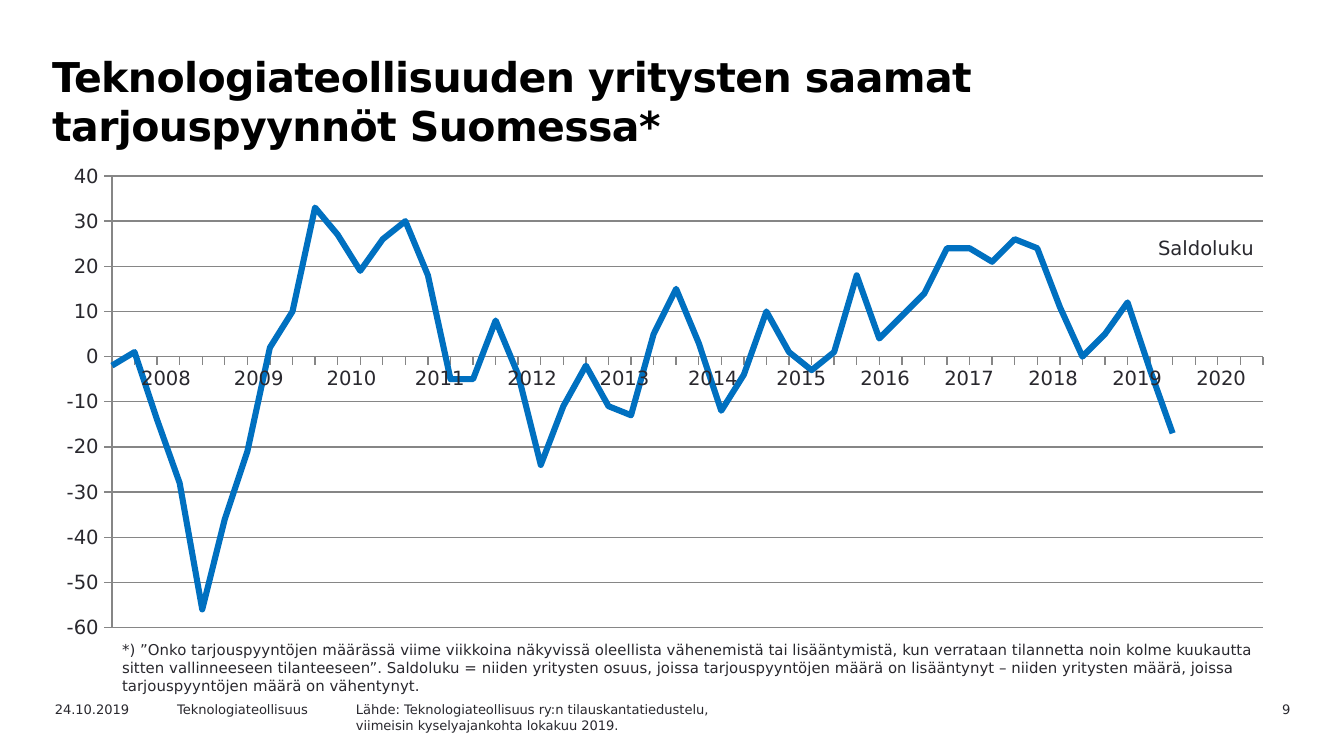
"""Build the slide on tender requests received by technology companies in Finland."""
from lxml import etree
from pptx import Presentation
from pptx.chart.data import CategoryChartData
from pptx.dml.color import RGBColor
from pptx.enum.chart import XL_CHART_TYPE, XL_TICK_LABEL_POSITION, XL_TICK_MARK
from pptx.enum.text import PP_ALIGN
from pptx.oxml import parse_xml
from pptx.oxml.ns import nsdecls, qn
from pptx.util import Pt

PX = 4572
FONT = "DejaVu Sans"
COLORS = {"title": "000000", "text": "29282E", "line": "0070C0", "grid": "868686"}
LEFT, CENTER, RIGHT = PP_ALIGN.LEFT, PP_ALIGN.CENTER, PP_ALIGN.RIGHT
LINE_CHART = XL_CHART_TYPE.LINE
NO_LABELS = XL_TICK_LABEL_POSITION.NONE
TICK_OUT, TICK_NONE = XL_TICK_MARK.OUTSIDE, XL_TICK_MARK.NONE
NO_TABLE_STYLE = "{2D5ABB26-0587-4C30-8999-92F81FD0307C}"


def write(frame, text, size=7, color="text", bold=False, align=LEFT, spacing=None):
    frame.word_wrap = True
    for index, line in enumerate(text.split("\n")):
        para = frame.add_paragraph() if index else frame.paragraphs[0]
        para.alignment = align
        span = para.add_run()
        span.text = line
        span.font.name = FONT
        span.font.size = Pt(size)
        span.font.bold = bold
        span.font.color.rgb = RGBColor.from_string(COLORS[color])
        if spacing is not None:
            span.font._element.set("spc", str(spacing))


def layout_xml(x, y, width=None, height=None):
    inner = '<c:layoutTarget val="inner"/>' if width else ""
    size = f'<c:w val="{width}"/><c:h val="{height}"/>' if width else ""
    return parse_xml(
        f'<c:layout {nsdecls("c")}><c:manualLayout>{inner}'
        '<c:xMode val="edge"/><c:yMode val="edge"/>'
        f'<c:x val="{x}"/><c:y val="{y}"/>{size}</c:manualLayout></c:layout>'
    )


deck = Presentation()
deck.slide_width, deck.slide_height = 2000 * PX, 1125 * PX
page = deck.slides.add_slide(deck.slide_layouts[6])

data = CategoryChartData()
data.categories = [str(quarter) for quarter in range(1, 53)]
data.add_series("Saldoluku", [
    -2, 1, -14, -28, -56, -36, -21, 2, 10, 33, 27, 19, 26, 30, 18, -5,
    -5, 8, -4, -24, -11, -2, -11, -13, 5, 15, 3, -12, -4, 10, 1, -3,
    1, 18, 4, 9, 14, 24, 24, 21, 26, 24, 11, 0, 5, 12, -3, -17,
    None, None, None, None,
])
chart = page.shapes.add_chart(
    LINE_CHART, 84 * PX, 236 * PX, 1836 * PX, 722 * PX, data
).chart
chart.has_legend = False
chart.font.name = FONT
chart.font.size = Pt(10.5)
chart.font.color.rgb = RGBColor.from_string(COLORS["text"])
write(chart.chart_title.text_frame, "Saldoluku", size=10.5)
chart.chart_title.include_in_layout = False
title_element = chart.chart_title._element
for old in title_element.findall(qn("c:layout")):
    title_element.remove(old)
title_element.find(qn("c:tx")).addnext(layout_xml(0.89, 0.15))

plot = chart.plots[0]
plot.vary_by_categories = False
area = plot._element.getparent()
for old in area.findall(qn("c:layout")):
    area.remove(old)
area.insert(0, layout_xml(0.045, 0.036, 0.933, 0.931))

series = plot.series[0]
series.smooth = False
series.format.line.width = Pt(3.25)
series.format.line.color.rgb = RGBColor.from_string(COLORS["line"])

values, quarters = chart.value_axis, chart.category_axis
values.minimum_scale, values.maximum_scale, values.major_unit = -60, 40, 10
values.has_major_gridlines = True
crossing = etree.Element(qn("c:crossBetween"), val="midCat")
values._element.find(qn("c:majorUnit")).addprevious(crossing)
quarters.tick_label_position = NO_LABELS
for axis in (values, quarters):
    axis.major_tick_mark, axis.minor_tick_mark = TICK_OUT, TICK_NONE
for part in (values, quarters, values.major_gridlines):
    part.format.line.width = Pt(0.75)
    part.format.line.color.rgb = RGBColor.from_string(COLORS["grid"])

widths = [138, 138, 138, 125, 150, 125, 138] + [125] * 6
table = page.shapes.add_table(
    1, len(widths), 178 * PX, 538 * PX, sum(widths) * PX, 52 * PX
).table
table.first_row = table.horz_banding = False
table._tbl.tblPr.find(qn("a:tableStyleId")).text = NO_TABLE_STYLE
for index, width in enumerate(widths):
    table.columns[index].width = width * PX
    cell = table.cell(0, index)
    cell.fill.background()
    cell.margin_left = cell.margin_right = 18 * PX
    cell.margin_top = cell.margin_bottom = 8 * PX
    write(cell.text_frame, str(2008 + index), size=10.5, align=CENTER)

title = "Teknologiateollisuuden yritysten saamat tarjouspyynnöt Suomessa*"
source = (
    "Lähde: Teknologiateollisuus ry:n tilauskantatiedustelu,\n"
    "viimeisin kyselyajankohta lokakuu 2019."
)
note = (
    "*) ”Onko tarjouspyyntöjen määrässä viime viikkoina näkyvissä oleellista "
    "vähenemistä tai lisääntymistä, kun verrataan tilannetta noin kolme kuukautta "
    "sitten vallinneeseen tilanteeseen”. Saldoluku = niiden yritysten osuus, joissa "
    "tarjouspyyntöjen määrä on lisääntynyt – niiden yritysten määrä, joissa "
    "tarjouspyyntöjen määrä on vähentynyt."
)
title_format = {"size": 22, "color": "title", "bold": True, "spacing": -30}
for left, top, width, height, text, text_format in (
    (58, 67, 1746, 188, title, title_format),
    (1752, 1034, 188, 36, "9", {"align": RIGHT}),
    (62, 1034, 200, 36, "24.10.2019", {}),
    (244, 1034, 284, 36, "Teknologiateollisuus", {}),
    (510, 1034, 650, 36, source, {}),
    (162, 944, 1730, 100, note, {"size": 8}),
):
    box = page.shapes.add_textbox(left * PX, top * PX, width * PX, height * PX)
    write(box.text_frame, text, **text_format)

deck.save("out.pptx")
